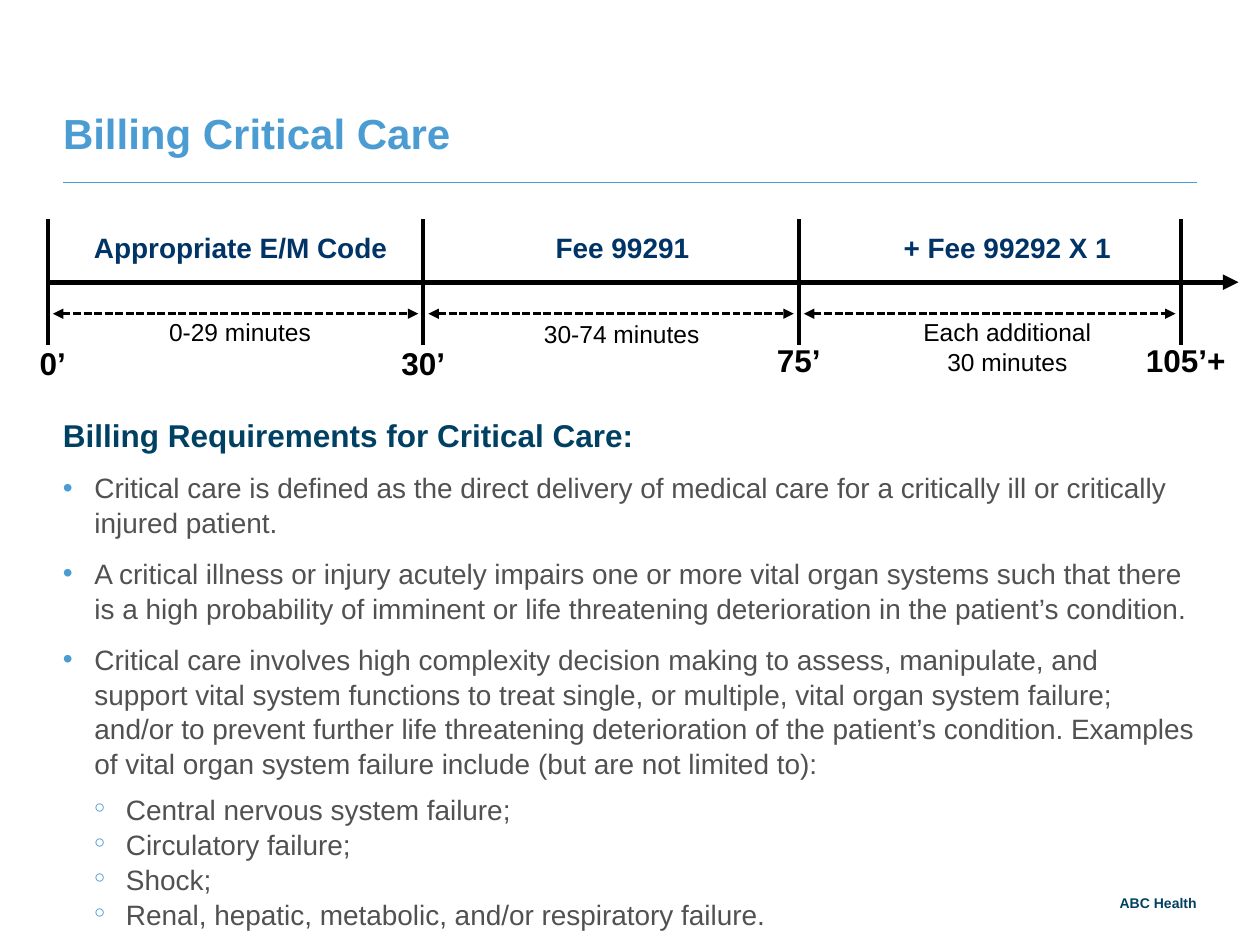
import pptx
import pptx.util
import pptx.dml.color
import pptx.enum.dml
import pptx.enum.shapes
import pptx.enum.text
import pptx.oxml
import pptx.oxml.ns
from lxml import etree

Inches = pptx.util.Inches
Pt = pptx.util.Pt
ALIGN = pptx.enum.text.PP_ALIGN
ANCHOR = pptx.enum.text.MSO_ANCHOR

FONT = "Arial"
BLUE, NAVY, CODE_NAVY, GREY, BLACK = "4B9CD3", "004163", "003366", "515151", "000000"

REQUIREMENTS = [
    "Critical care is defined as the direct delivery of medical care for a critically ill "
    "or critically injured patient.",
    "A critical illness or injury acutely impairs one or more vital organ systems such that "
    "there is a high probability of imminent or life threatening deterioration in the "
    "patient’s condition.",
    "Critical care involves high complexity decision making to assess, manipulate, and "
    "support vital system functions to treat single, or multiple, vital organ system failure; "
    "and/or to prevent further life threatening deterioration of the patient’s condition. "
    "Examples of vital organ system failure include (but are not limited to):",
]
FAILURES = [
    "Central nervous system failure;",
    "Circulatory failure;",
    "Shock;",
    "Renal, hepatic, metabolic, and/or respiratory failure.",
]


def rgb(color):
    return pptx.dml.color.RGBColor.from_string(color)


def add_child(parent, tag, **attributes):
    child = etree.SubElement(parent, pptx.oxml.ns.qn(tag))
    for key, value in attributes.items():
        child.set(key, value)
    return child


def add_run(paragraph, text, size, color, bold=False):
    run = paragraph.add_run()
    run.text = text
    run.font.name = FONT
    run.font.size = Pt(size)
    run.font.bold = bold
    run.font.color.rgb = rgb(color)


def set_frame(frame, insets, anchor=ANCHOR.TOP):
    frame.word_wrap = True
    frame.auto_size = pptx.enum.text.MSO_AUTO_SIZE.NONE
    frame.vertical_anchor = anchor
    (frame.margin_left, frame.margin_top,
     frame.margin_right, frame.margin_bottom) = [Inches(inset) for inset in insets]


def add_label(slide, box, text, size, color, bold=False, align=ALIGN.CENTER,
              insets=(0.1, 0.05, 0.1, 0.05), anchor=ANCHOR.TOP):
    frame = slide.shapes.add_textbox(*[Inches(length) for length in box]).text_frame
    set_frame(frame, insets, anchor)
    frame.paragraphs[0].alignment = align
    add_run(frame.paragraphs[0], text, size, color, bold)


def add_line(slide, start, end, color, width, dashed=False, head=False, tail=False):
    line = slide.shapes.add_connector(
        pptx.enum.shapes.MSO_CONNECTOR.STRAIGHT,
        *[Inches(length) for length in (*start, *end)])
    line.line.color.rgb = rgb(color)
    line.line.width = Pt(width)
    if dashed:
        line.line.dash_style = pptx.enum.dml.MSO_LINE.SQUARE_DOT
    outline = line.line._get_or_add_ln()
    if head:
        add_child(outline, "a:headEnd", type="triangle")
    if tail:
        add_child(outline, "a:tailEnd", type="triangle")
    add_child(line._element.spPr, "a:effectLst")


def add_title(slide, box, text):
    title = slide.shapes.title
    title.left, title.top, title.width, title.height = [Inches(length) for length in box]
    set_frame(title.text_frame, (0, 0.95, 1.5, 0), ANCHOR.BOTTOM)
    paragraph = title.text_frame.paragraphs[0]
    paragraph.alignment = ALIGN.LEFT
    paragraph.line_spacing = Pt(28)
    add_run(paragraph, text, 24, BLUE, True)


def add_timeline(slide, box):
    left, top, width, height = box
    middle = top + height / 2
    ticks = [left + offset for offset in (0, 2.98, 5.96, 8.99)]

    # Time axis and its ticks
    add_line(slide, (left, middle), (left + width, middle), BLACK, 3, tail=True)
    for tick in ticks:
        add_line(slide, (tick, top), (tick, top + height), BLACK, 2.25)

    # Spans between ticks: code above the axis, duration below
    spans = [
        ("Appropriate E/M Code", 1.91, "0-29 minutes", 1.905, 2.47),
        ("Fee 99291", 4.94, "30-74 minutes", 4.935, 2.48),
        ("+ Fee 99292 X 1", 7.995, "Each additional 30 minutes", 7.995, 2.47),
    ]
    span_y = middle + 0.25
    for start, end, span in zip(ticks, ticks[1:], spans):
        code, code_center, duration, duration_center, duration_top = span
        add_line(slide, (start + 0.04, span_y), (end - 0.04, span_y), BLACK, 1.5,
                 dashed=True, head=True, tail=True)
        add_label(slide, (code_center - 1.3, top + 0.04, 2.6, 0.37), code, 16, CODE_NAVY, True)
        add_label(slide, (duration_center - 0.775, duration_top, 1.55, 0.57),
                  duration, 14, BLACK)

    # Minute marks
    marks = [("0’", 0.42, 2.68), ("30’", 3.36, 2.68), ("75’", 6.34, 2.66), ("105’+", 9.41, 2.66)]
    for mark, center, mark_top in marks:
        add_label(slide, (center - 0.42, mark_top, 0.84, 0.4), mark, 18, BLACK, True)


def add_bullet(paragraph, char, indent, scale):
    properties = paragraph._p.get_or_add_pPr()
    properties.set("marL", str(Inches(indent)))
    properties.set("indent", str(-Inches(0.25)))
    add_child(add_child(properties, "a:buClr"), "a:srgbClr", val=BLUE)
    add_child(properties, "a:buSzPct", val=str(scale * 1000))
    add_child(properties, "a:buFont", typeface=FONT)
    add_child(properties, "a:buChar", char=char)


def add_requirements(slide, box):
    frame = slide.shapes.add_textbox(*[Inches(length) for length in box]).text_frame
    set_frame(frame, (0, 0.08, 0, 0))

    heading = frame.paragraphs[0]
    heading.space_after = Pt(9)
    heading.line_spacing = 1.04
    add_run(heading, "Billing Requirements for Critical Care:", 18, NAVY, True)

    items = [(text, "•", 0.25, 100, 9) for text in REQUIREMENTS[:-1]]
    items.append((REQUIREMENTS[-1], "•", 0.25, 100, 6))
    items += [(text, "￮", 0.5, 80, 0) for text in FAILURES]
    for text, char, indent, scale, space_after in items:
        paragraph = frame.add_paragraph()
        paragraph.space_after = Pt(space_after)
        paragraph.line_spacing = 1.04
        add_bullet(paragraph, char, indent, scale)
        add_run(paragraph, text, 16, GREY)


def main():
    deck = pptx.Presentation()
    deck.slide_width, deck.slide_height = Inches(10), Inches(7.5)
    slide = deck.slides.add_slide(deck.slide_layouts.get_by_name("Title Only"))

    # Title and rule
    add_title(slide, (0.5, 0.38, 9, 0.79), "Billing Critical Care")
    add_line(slide, (0.5, 1.45), (9.5, 1.45), BLUE, 0.5)

    # Content
    add_requirements(slide, (0.5, 3.21, 9, 3.49))
    add_timeline(slide, (0.38, 1.74, 9.45, 1))

    # Footer
    add_label(slide, (8.27, 7, 1.23, 0.23), "ABC Health", 8, NAVY, True, ALIGN.RIGHT,
              (0, 0, 0, 0), ANCHOR.BOTTOM)

    deck.save("out.pptx")


if __name__ == "__main__":
    main()
